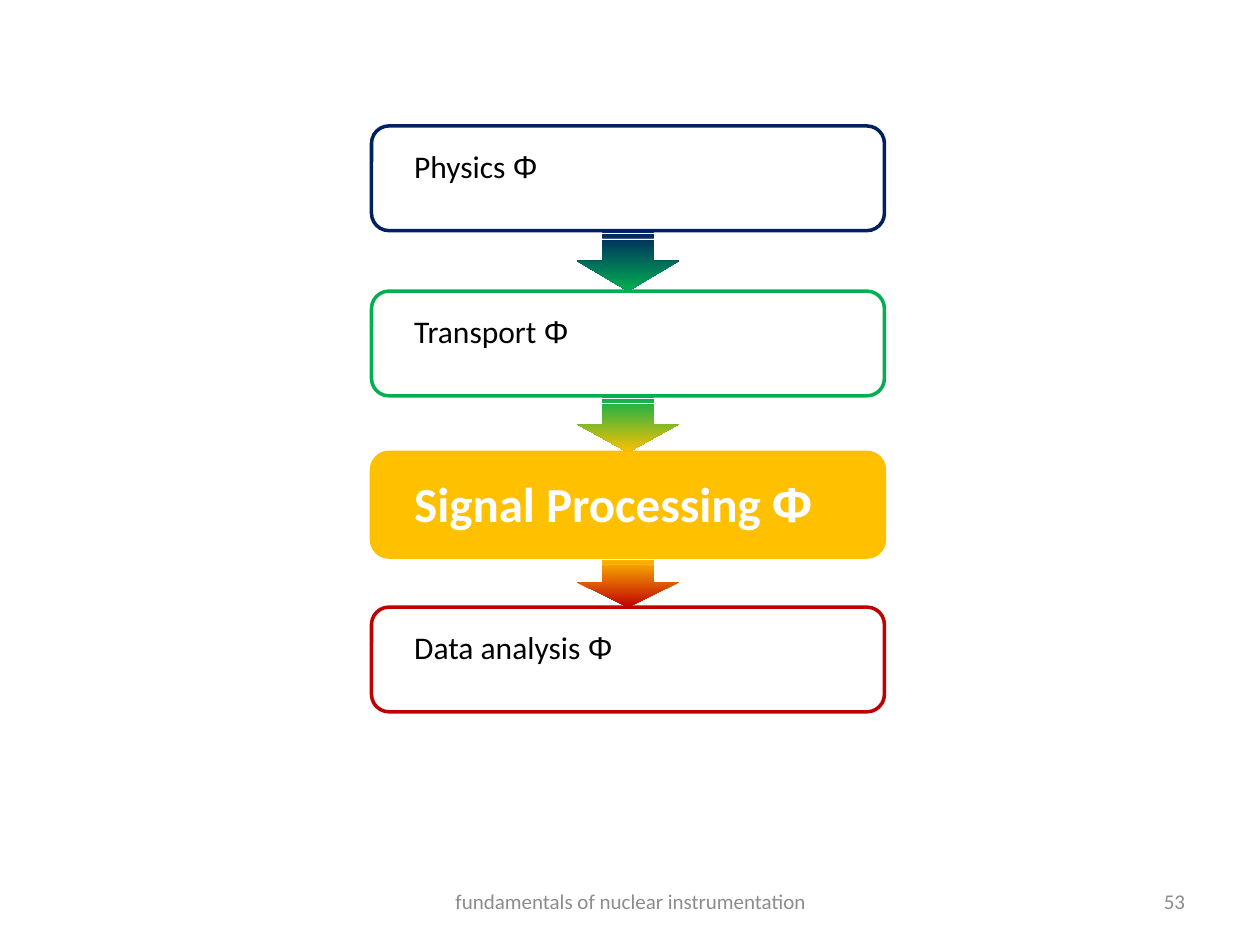
"""Build a slide showing the nuclear instrumentation chain as a vertical flow."""
from dataclasses import dataclass
from itertools import pairwise

from pptx import Presentation
from pptx.dml.color import RGBColor
from pptx.enum.shapes import MSO_SHAPE as Preset
from pptx.enum.text import MSO_ANCHOR as Anchor, MSO_AUTO_SIZE as AutoSize, PP_ALIGN as Align
from pptx.shapes.autoshape import Shape
from pptx.slide import Slide
from pptx.util import Cm, Pt

BOX_LEFT, BOX_WIDTH, BOX_HEIGHT = 7.49, 10.34, 2.11
LABEL_LEFT, LABEL_INSET = 8.1, 0.3
ARROW_BREADTH = 2.06


@dataclass(frozen=True)
class Stage:
    name: str
    top: float
    color: str
    label_width: float
    label_height: float = 1.5
    active: bool = False


@dataclass(frozen=True)
class Footer:
    text: str
    left: float
    width: float
    align: Align


STAGES = (
    Stage("Physics", 2.54, "002060", 4.42),
    Stage("Transport", 5.87, "00B050", 5.36),
    Stage("Signal Processing", 9.12, "FFC000", 8.56, 1.45, True),
    Stage("Data analysis", 12.24, "C00000", 6.65),
)
FOOTERS = (
    Footer("fundamentals of nuclear instrumentation", 8.69, 8.05, Align.CENTER),
    Footer("53", 18.21, 5.93, Align.RIGHT),
)


def rgb(value: str) -> RGBColor:
    return RGBColor.from_string(value)


def add_preset(slide: Slide, preset: Preset, left: float, top: float,
               width: float, height: float) -> Shape:
    shape = slide.shapes.add_shape(preset, Cm(left), Cm(top), Cm(width), Cm(height))
    shape.shadow.inherit = False
    return shape


def add_box(slide: Slide, stage: Stage) -> None:
    box = add_preset(slide, Preset.ROUNDED_RECTANGLE, BOX_LEFT, stage.top, BOX_WIDTH, BOX_HEIGHT)
    if stage.active:
        box.fill.solid()
        box.fill.fore_color.rgb = rgb(stage.color)
    else:
        box.fill.background()
    box.line.color.rgb = rgb(stage.color)
    box.line.width = Pt(2)


def add_label(slide: Slide, stage: Stage) -> None:
    label = slide.shapes.add_textbox(Cm(LABEL_LEFT), Cm(stage.top + LABEL_INSET),
                                     Cm(stage.label_width), Cm(stage.label_height))
    text_frame = label.text_frame
    text_frame.word_wrap = False
    text_frame.auto_size = AutoSize.SHAPE_TO_FIT_TEXT
    paragraph = text_frame.paragraphs[0]
    for text, font_name in ((f"{stage.name} ", "Calibri"), ("Φ", "Arial")):
        run = paragraph.add_run()
        run.text = text
        run.font.name = font_name
        run.font.size = Pt(28 if stage.active else 18)
        run.font.bold = stage.active
        run.font.color.rgb = rgb("FFFFFF" if stage.active else "000000")


def add_arrow(slide: Slide, upper: Stage, lower: Stage) -> None:
    length = lower.top - upper.top - BOX_HEIGHT
    center_x = BOX_LEFT + BOX_WIDTH / 2
    center_y = lower.top - length / 2
    arrow = add_preset(slide, Preset.STRIPED_RIGHT_ARROW, center_x - length / 2,
                       center_y - ARROW_BREADTH / 2, length, ARROW_BREADTH)
    arrow.rotation = 90
    arrow.line.fill.background()
    arrow.fill.gradient()
    arrow.fill.gradient_angle = 0
    for stop, position, stage in zip(arrow.fill.gradient_stops, (0, 1), (upper, lower)):
        stop.position = position
        stop.color.rgb = rgb(stage.color)


def add_footer(slide: Slide, footer: Footer) -> None:
    textbox = slide.shapes.add_textbox(Cm(footer.left), Cm(17.65), Cm(footer.width), Cm(1.02))
    text_frame = textbox.text_frame
    text_frame.word_wrap = True
    text_frame.vertical_anchor = Anchor.MIDDLE
    text_frame.text = footer.text
    paragraph = text_frame.paragraphs[0]
    paragraph.alignment = footer.align
    font = paragraph.runs[0].font
    font.name = "Calibri"
    font.size = Pt(12)
    font.color.rgb = rgb("8C8C8C")


def main() -> None:
    presentation = Presentation()
    presentation.slide_width, presentation.slide_height = Cm(25.4), Cm(19.05)
    slide = presentation.slides.add_slide(presentation.slide_layouts[6])
    for stage in STAGES:
        add_box(slide, stage)
        add_label(slide, stage)
    for upper, lower in pairwise(STAGES):
        add_arrow(slide, upper, lower)
    for footer in FOOTERS:
        add_footer(slide, footer)
    presentation.save("out.pptx")


if __name__ == "__main__":
    main()
